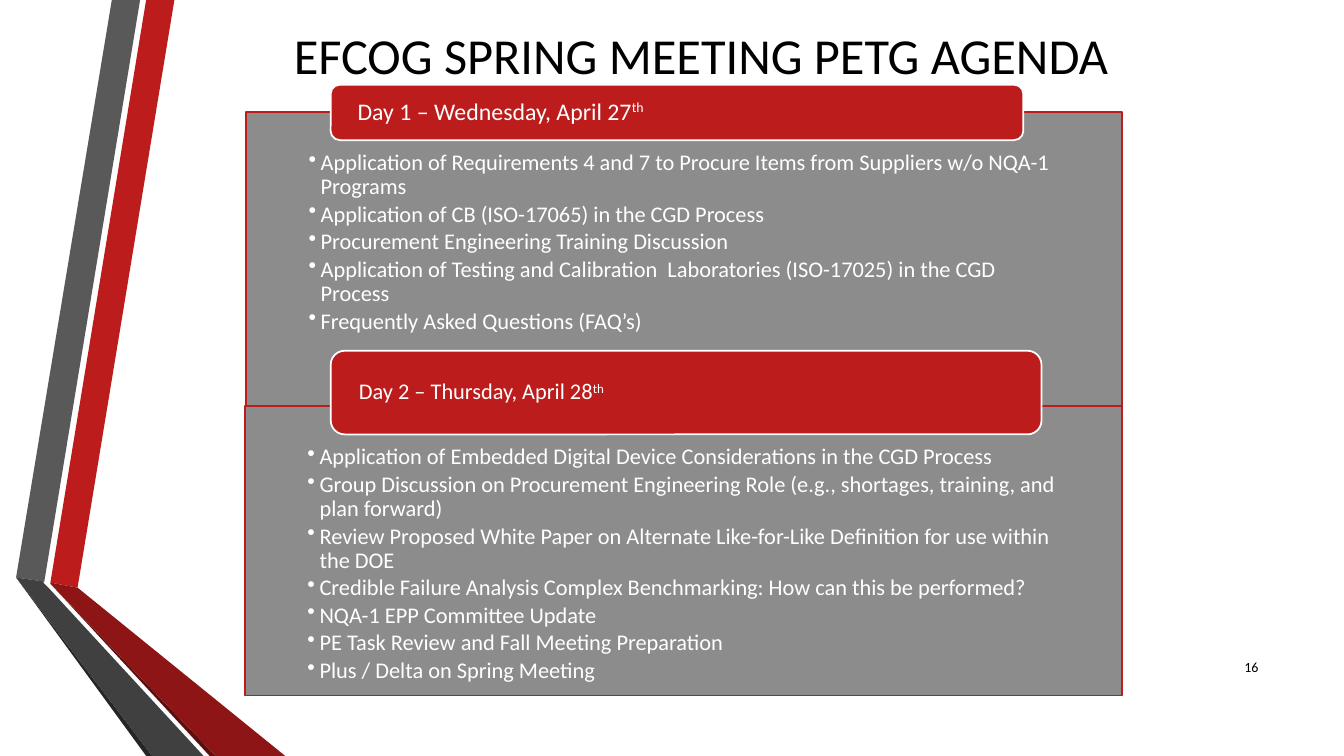
from lxml import etree
from pptx import Presentation
from pptx import util as u
from pptx.dml.color import RGBColor
from pptx.enum import shapes, text
from pptx.oxml import ns

PX = u.Inches(1) // 100
FONT = "Calibri"
RED, GREY, WHITE, BLACK = "BC1C1C", "808080", "FFFFFF", "000000"

RIBBONS = [
    (RED, [(50, 578), (77, 583), (173, 0), (145, 0)]),
    ("595959", [(139, 0), (111, 0), (16, 573), (44, 577)]),
    ("262626", [(16, 573), (145, 750), (151, 750)]),
    ("5E0E0E", [(50, 579), (208, 750), (214, 750)]),
    ("8D1515", [(50, 579), (214, 750), (283, 750), (77, 583), (50, 578)]),
    ("404040", [(202, 750), (48, 583), (43, 578), (44, 577), (16, 573), (151, 750)]),
]

DAYS = [
    {
        "panel": (244, 111, 869, 292),
        "header": (328, 84, 687, 55),
        "heading": "Day 1 – Wednesday, April 27",
        "size": 17,
        "topics": [
            "Application of Requirements 4 and 7 to Procure Items from Suppliers w/o NQA-1 Programs",
            "Application of CB (ISO-17065) in the CGD Process",
            "Procurement Engineering Training Discussion",
            "Application of Testing and Calibration  Laboratories (ISO-17025) in the CGD Process",
            "Frequently Asked Questions (FAQ’s)",
        ],
    },
    {
        "panel": (243, 403, 870, 287),
        "header": (328, 348, 705, 83),
        "heading": "Day 2 – Thursday, April 28",
        "size": 16,
        "topics": [
            "Application of Embedded Digital Device Considerations in the CGD Process",
            "Group Discussion on Procurement Engineering Role (e.g., shortages, training, and plan forward)",
            "Review Proposed White Paper on Alternate Like-for-Like Definition for use within the DOE",
            "Credible Failure Analysis Complex Benchmarking: How can this be performed?",
            "NQA-1 EPP Committee Update",
            "PE Task Review and Fall Meeting Preparation",
            "Plus / Delta on Spring Meeting",
        ],
    },
]


def color(value):
    return RGBColor.from_string(value)


def px(*lengths):
    return [length * PX for length in lengths]


def add_element(parent, tag, **attributes):
    return etree.SubElement(parent, ns.qn(tag), attributes)


def style_run(run, size, value):
    run.font.name = FONT
    run.font.size = u.Pt(size)
    run.font.color.rgb = color(value)


def set_frame(frame, anchor, insets):
    frame.word_wrap = True
    frame.vertical_anchor = anchor
    (frame.margin_left, frame.margin_top,
     frame.margin_right, frame.margin_bottom) = px(*insets)


def add_ribbons(slide):
    for fill, points in RIBBONS:
        builder = slide.shapes.build_freeform(*points[0], scale=PX)
        builder.add_line_segments(points[1:], close=True)
        shape = builder.convert_to_shape()
        shape.shadow.inherit = False
        shape.fill.solid()
        shape.fill.fore_color.rgb = color(fill)
        shape.line.fill.background()


def add_label(slide, box, wording, size, alignment):
    shape = slide.shapes.add_textbox(*px(*box))
    set_frame(shape.text_frame, text.MSO_ANCHOR.MIDDLE, (10, 5, 10, 5))
    shape.text_frame.text = wording
    paragraph = shape.text_frame.paragraphs[0]
    paragraph.alignment = alignment
    run = paragraph.runs[0]
    style_run(run, size, BLACK)
    return run


def add_title(slide, box):
    run = add_label(slide, box, "EFCOG SPRING MEETING PETG AGENDA", 36, text.PP_ALIGN.CENTER)
    properties = run.font._element
    effects = etree.Element(ns.qn("a:effectLst"))
    shadow = add_element(effects, "a:outerShdw", blurRad="38100", dist="38100",
                         dir="2700000", algn="tl")
    shade = add_element(shadow, "a:srgbClr", val=BLACK)
    add_element(shade, "a:alpha", val="43000")
    properties.find(ns.qn("a:solidFill")).addnext(effects)


def add_block(slide, kind, box, fill, line):
    shape = slide.shapes.add_shape(kind, *px(*box))
    shape.shadow.inherit = False
    shape.fill.solid()
    shape.fill.fore_color.rgb = color(fill)
    shape.line.color.rgb = color(line)
    shape.line.width = u.Pt(1.25)
    return shape


def add_panel(slide, box, topics):
    shape = add_block(slide, shapes.MSO_SHAPE.RECTANGLE, box, GREY, RED)
    shade = shape.fill._xPr.find(".//" + ns.qn("a:srgbClr"))
    add_element(shade, "a:alpha", val="90000")
    frame = shape.text_frame
    set_frame(frame, text.MSO_ANCHOR.TOP, (62, 39, 62, 9))
    frame.text = "\n".join(topics)
    for paragraph in frame.paragraphs:
        properties = paragraph._p.get_or_add_pPr()
        properties.set("marL", str(12 * PX))
        properties.set("indent", str(-12 * PX))
        add_element(properties, "a:buChar", char="•")
        paragraph.alignment = text.PP_ALIGN.LEFT
        paragraph.line_spacing = 0.9
        paragraph.space_after = u.Pt(2.4)
        style_run(paragraph.runs[0], 16, WHITE)


def add_header(slide, box, heading, size):
    shape = add_block(slide, shapes.MSO_SHAPE.ROUNDED_RECTANGLE, box, RED, WHITE)
    frame = shape.text_frame
    set_frame(frame, text.MSO_ANCHOR.MIDDLE, (24, 3, 24, 3))
    frame.text = heading
    paragraph = frame.paragraphs[0]
    paragraph.alignment = text.PP_ALIGN.LEFT
    paragraph.line_spacing = 0.9
    ordinal = paragraph.add_run()
    ordinal.text = "th"
    for run in paragraph.runs:
        style_run(run, size, WHITE)
    ordinal.font._element.set("baseline", "30000")


def main():
    presentation = Presentation()
    presentation.slide_width, presentation.slide_height = px(1333, 750)
    slide = presentation.slides.add_slide(presentation.slide_layouts[6])
    add_ribbons(slide)
    add_label(slide, (1198, 642, 60, 40), "16", 10, text.PP_ALIGN.RIGHT)
    add_title(slide, (125, 23, 1141, 61))
    for day in DAYS:
        add_panel(slide, day["panel"], day["topics"])
        add_header(slide, day["header"], day["heading"], day["size"])
    presentation.save("out.pptx")


if __name__ == "__main__":
    main()
